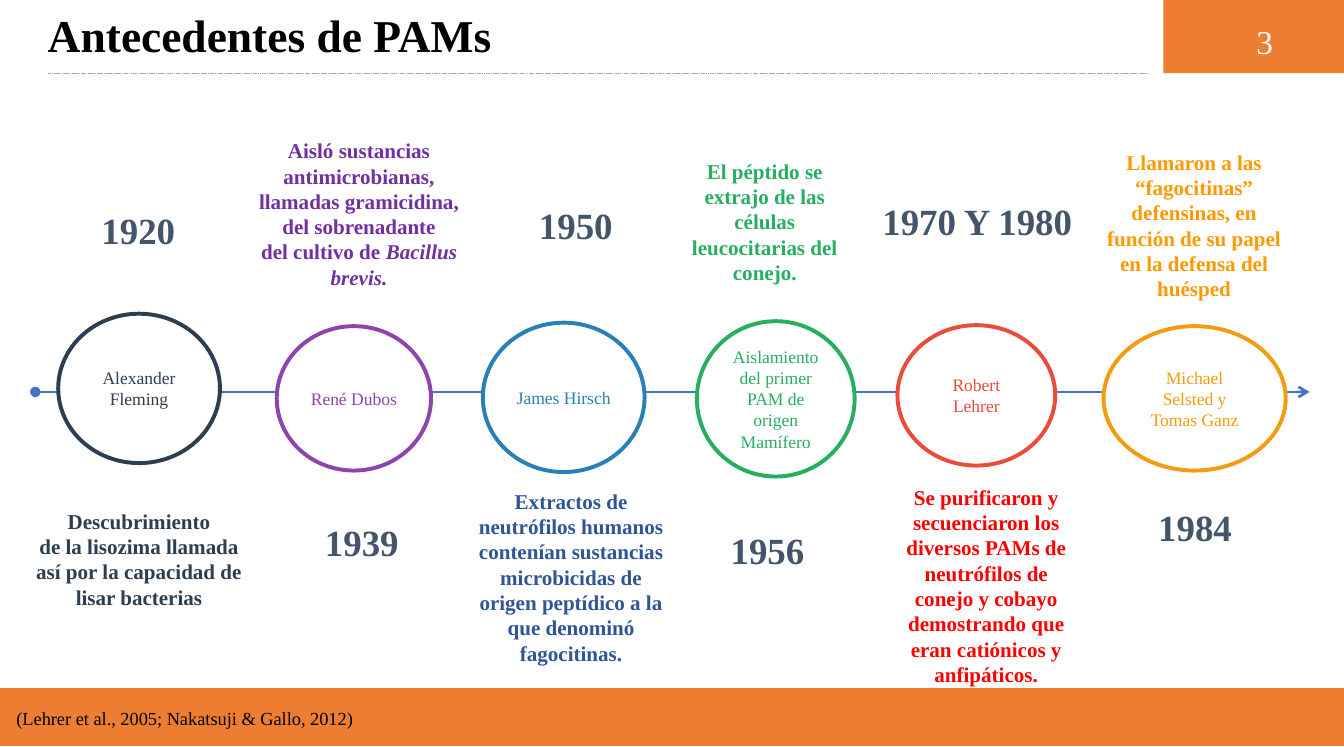
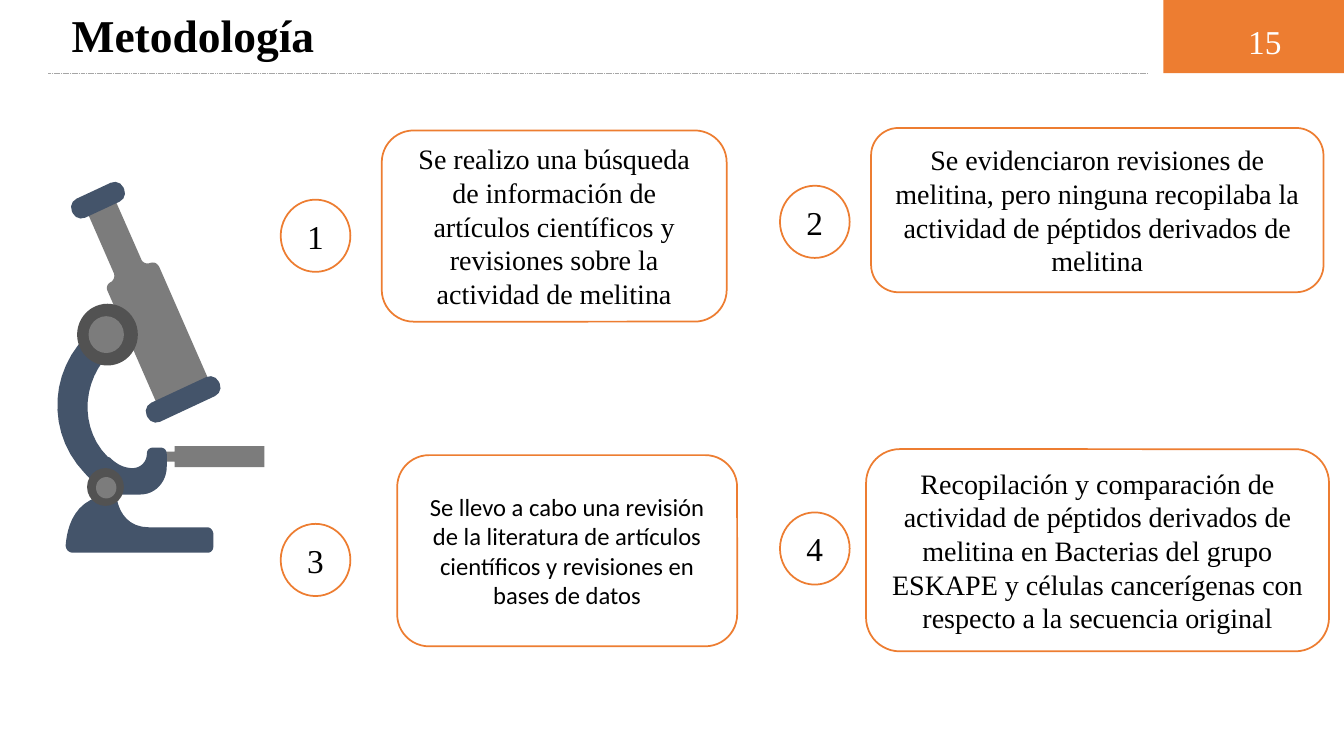
from typing import NamedTuple, Optional

from lxml.etree import SubElement
from pptx import Presentation
from pptx.dml.color import RGBColor
from pptx.enum.dml import MSO_LINE
from pptx.enum.shapes import MSO_CONNECTOR, MSO_SHAPE
from pptx.enum.text import MSO_ANCHOR, PP_ALIGN
from pptx.oxml.ns import qn
from pptx.util import Cm, Pt

# Palette and fonts
ORANGE = RGBColor(0xED, 0x7D, 0x31)
BLACK = RGBColor(0, 0, 0)
WHITE = RGBColor(0xFF, 0xFF, 0xFF)
RULE_GRAY = RGBColor(0xA6, 0xA6, 0xA6)
AXIS_BLUE = RGBColor(0x44, 0x72, 0xC4)
SLATE = RGBColor(0x44, 0x54, 0x6A)
METAL = RGBColor(0x7C, 0x7C, 0x7C)
DARK_METAL = RGBColor(0x52, 0x52, 0x52)
NAVY = RGBColor(0x2D, 0x3E, 0x50)
PURPLE = RGBColor(0x8D, 0x44, 0xAD)
VIOLET = RGBColor(0x70, 0x30, 0xA0)
SKY = RGBColor(0x29, 0x7F, 0xB8)
BLUE = RGBColor(0x2F, 0x55, 0x97)
GREEN = RGBColor(0x27, 0xAE, 0x61)
CORAL = RGBColor(0xE8, 0x4C, 0x3D)
RED = RGBColor(0xFF, 0, 0)
AMBER = RGBColor(0xF3, 0x9C, 0x11)
GOLD = RGBColor(0xFF, 0x99, 0)
SERIF = "Times New Roman"
SANS = "Calibri"

SLIDE_WIDTH, SLIDE_HEIGHT = 27.0, 15.0
HEADER_HEIGHT = 1.47


class Box(NamedTuple):
    """Left, top, width and height in centimetres."""
    left: float
    top: float
    width: float
    height: float

    def emu(self) -> list:
        return [Cm(value) for value in self]


class Milestone(NamedTuple):
    who: tuple
    node: Box
    color: RGBColor
    year: str
    year_box: Box
    fact: tuple
    fact_box: Box
    fact_color: RGBColor


class Step(NamedTuple):
    text: str
    badge: Box
    card: Box
    size: float = 16
    font: str = SERIF


class Outline(NamedTuple):
    """Pairs are straight points; six numbers are a Bézier curve."""
    color: RGBColor
    points: list


MILESTONES = [
    Milestone(("Alexander", "Fleming"), Box(1.17, 6.3, 3.25, 3), NAVY,
              "1920", Box(1.78, 4.04, 2, 1.14),
              ("Descubrimiento", "de la lisozima llamada así por la capacidad de lisar bacterias"),
              Box(0.38, 10.08, 4.83, 2.31), NAVY),
    Milestone(("René Dubos",), Box(5.56, 6.55, 3.1, 2.9), PURPLE,
              "1939", Box(6.27, 10.31, 2, 1.14),
              ("Aisló sustancias antimicrobianas, llamadas gramicidina, del sobrenadante",
               "del cultivo de *Bacillus brevis.*"),
              Box(4.8, 2.64, 4.83, 3.33), VIOLET),
    Milestone(("James Hirsch",), Box(9.7, 6.48, 3.25, 3), SKY,
              "1950", Box(10.57, 3.94, 2, 1.14),
              ("Extractos de neutrófilos humanos contenían sustancias microbicidas de",
               "origen peptídico a la que denominó fagocitinas."),
              Box(9.14, 9.68, 4.67, 3.84), BLUE),
    Milestone(("Aislamiento del primer PAM de origen Mamífero",), Box(14, 6.45, 3.17, 3.12), GREEN,
              "1956", Box(14.42, 10.46, 2, 1.14),
              ("El péptido se extrajo de las células leucocitarias del conejo.",),
              Box(13.36, 3.05, 4.01, 2.82), GREEN),
    Milestone(("Robert Lehrer",), Box(18.03, 6.53, 3.17, 2.82), CORAL,
              "1970 Y 1980", Box(17.17, 3.86, 4.93, 1.14),
              ("Se purificaron y secuenciaron los diversos PAMs de neutrófilos de conejo y cobayo",
               "demostrando que eran catiónicos y anfipáticos."),
              Box(17.81, 9.6, 4.01, 4.37), RED),
    Milestone(("Michael Selsted y", "Tomas Ganz"), Box(22.17, 6.55, 3.66, 2.9), AMBER,
              "1984", Box(23.01, 10.01, 2, 1.14),
              ("Llamaron a las “fagocitinas” defensinas, en función de su papel en la defensa del",
               "huésped"),
              Box(21.92, 2.87, 4.14, 3.33), GOLD),
]

STEPS = [
    Step("Se realizo una búsqueda de información de artículos científicos y revisiones "
         "sobre la actividad de melitina",
         Box(5.64, 4.01, 1.4, 1.45), Box(7.67, 2.62, 6.93, 3.84)),
    Step("Se evidenciaron revisiones de melitina, pero ninguna recopilaba la actividad "
         "de péptidos derivados de melitina",
         Box(15.67, 3.73, 1.4, 1.45), Box(17.5, 2.57, 9.09, 3.3)),
    Step("Se llevo a cabo una revisión de la literatura de artículos científicos y "
         "revisiones en bases de datos",
         Box(5.64, 10.52, 1.4, 1.45), Box(7.98, 9.14, 6.83, 3.84), 14, SANS),
    Step("Recopilación y comparación de actividad de péptidos derivados de melitina en "
         "Bacterias del grupo ESKAPE y células cancerígenas con respecto a la secuencia original",
         Box(15.67, 10.29, 1.4, 1.45), Box(17.4, 9.02, 9.3, 4.06)),
]

# Microscope parts
TUBE = Outline(METAL, [
    (2.29, 5.49), (1.7, 4.14), (2.26, 3.89), (2.84, 5.21),
    (2.87, 5.28, 2.95, 5.31, 3.02, 5.28), (3.1, 5.26, 3.15, 5.28, 3.2, 5.36),
    (4.29, 7.85), (3.25, 8.33), (2.16, 5.84),
    (2.13, 5.77, 2.16, 5.69, 2.24, 5.66), (2.29, 5.61, 2.31, 5.56, 2.29, 5.49)])
STAGE = Outline(METAL, [
    (3.07, 9.07), (3.51, 9.07), (3.51, 8.96), (5.31, 8.96),
    (5.31, 9.38), (3.51, 9.38), (3.51, 9.27), (3.07, 9.27)])
BASE = Outline(SLATE, [
    (4.17, 11.1), (1.47, 11.1), (1.37, 11.1, 1.32, 11.02, 1.32, 10.95),
    (1.35, 10.62, 1.47, 9.93, 2.34, 9.93), (2.34, 9.93, 2.36, 10.59, 3, 10.59),
    (4.17, 10.59), (4.24, 10.59, 4.29, 10.67, 4.29, 10.74),
    (4.29, 10.95), (4.29, 11.05, 4.24, 11.1, 4.17, 11.1)])
ARM = Outline(SLATE, [
    (3.35, 9.12), (3.35, 9.37), (3.35, 9.68, 3.12, 9.93, 2.82, 9.93),
    (2.11, 9.93), (1.7, 9.5), (1.02, 8.79, 0.97, 7.7, 1.57, 6.93),
    (1.85, 6.6), (1.98, 6.45, 2.24, 6.48, 2.34, 6.65),
    (2.36, 6.78, 2.36, 6.91, 2.29, 6.99), (2.08, 7.24),
    (1.63, 7.82, 1.65, 8.66, 2.16, 9.17), (2.21, 9.19),
    (2.34, 9.32, 2.49, 9.4, 2.67, 9.4), (2.82, 9.4, 2.95, 9.27, 2.95, 9.12),
    (2.95, 9.04, 3, 8.99, 3.07, 8.99), (3.23, 8.99),
    (3.3, 8.99, 3.35, 9.04, 3.35, 9.12)])
CAPS = [Box(2.88, 7.81, 1.6, 0.42), Box(1.4, 3.81, 1.14, 0.42)]
CAP_ANGLE = -25
KNOBS = [
    (Box(1.55, 6.1, 1.22, 1.24), DARK_METAL), (Box(1.78, 6.35, 0.71, 0.74), METAL),
    (Box(1.75, 9.4, 0.74, 0.76), DARK_METAL), (Box(1.93, 9.58, 0.41, 0.43), METAL),
]


# Drawing helpers
def paint(shape, fill: Optional[RGBColor], line: Optional[RGBColor], width: float = 1):
    shape.shadow.inherit = False
    if fill is None:
        shape.fill.background()
    else:
        shape.fill.solid()
        shape.fill.fore_color.rgb = fill
    if line is None:
        shape.line.fill.background()
    else:
        shape.line.color.rgb = line
        shape.line.width = Pt(width)
    return shape


def add_figure(slide, kind, box: Box, fill: Optional[RGBColor] = None,
               line: Optional[RGBColor] = None, width: float = 1):
    return paint(slide.shapes.add_shape(kind, *box.emu()), fill, line, width)


def write(shape, *lines: str, size: float, color: RGBColor = BLACK, font: str = SERIF,
          bold: bool = False, align=PP_ALIGN.CENTER, anchor=MSO_ANCHOR.MIDDLE,
          spacing: float = 1.0) -> None:
    """Write one paragraph per line; text between asterisks is italic."""
    frame = shape.text_frame
    frame.word_wrap = True
    frame.vertical_anchor = anchor
    for index, line in enumerate(lines):
        paragraph = frame.paragraphs[0] if index == 0 else frame.add_paragraph()
        paragraph.alignment = align
        paragraph.line_spacing = spacing
        for part, text in enumerate(line.split("*")):
            if not text:
                continue
            run = paragraph.add_run()
            run.text = text
            run.font.name = font
            run.font.size = Pt(size)
            run.font.bold = bold
            run.font.italic = part % 2 == 1
            run.font.color.rgb = color


def add_text(slide, box: Box, *lines: str, **style) -> None:
    write(slide.shapes.add_textbox(*box.emu()), *lines, **style)


def add_rule(slide, start: float, end: float, y: float, color: RGBColor, width: float):
    rule = slide.shapes.add_connector(MSO_CONNECTOR.STRAIGHT, Cm(start), Cm(y), Cm(end), Cm(y))
    rule.line.color.rgb = color
    rule.line.width = Pt(width)
    SubElement(rule._element.spPr, qn("a:effectLst"))
    return rule


def add_outline(slide, outline: Outline, samples: int = 12) -> None:
    x, y = outline.points[0]
    builder = slide.shapes.build_freeform(Cm(x), Cm(y))
    vertices = []
    for point in outline.points[1:]:
        if len(point) == 2:
            vertices.append(point)
        else:
            x1, y1, x2, y2, x3, y3 = point
            for step in range(1, samples + 1):
                t = step / samples
                u = 1 - t
                a, b, c, d = u ** 3, 3 * u * u * t, 3 * u * t * t, t ** 3
                vertices.append((a * x + b * x1 + c * x2 + d * x3,
                                 a * y + b * y1 + c * y2 + d * y3))
        x, y = point[-2:]
    builder.add_line_segments([(Cm(px), Cm(py)) for px, py in vertices], close=True)
    paint(builder.convert_to_shape(), outline.color, None)


# Slides
def add_page(deck, title: str, number: int, title_left: float):
    slide = deck.slides.add_slide(deck.slide_layouts[6])
    rule = add_rule(slide, 0.97, 23.06, HEADER_HEIGHT, RULE_GRAY, 0.25)
    rule.line.dash_style = MSO_LINE.SQUARE_DOT
    add_figure(slide, MSO_SHAPE.RECTANGLE, Box(23.37, 0, 3.63, HEADER_HEIGHT), ORANGE)
    add_text(slide, Box(title_left, 0.23, 21.56, 1.14), title, size=25.9, bold=True,
             align=PP_ALIGN.LEFT, spacing=0.8)
    add_text(slide, Box(24.71, 0.3, 1.4, 1.07), str(number), size=19, color=WHITE,
             anchor=MSO_ANCHOR.TOP)
    return slide


def add_background_slide(deck) -> None:
    slide = add_page(deck, "Antecedentes de PAMs", 3, 0.71)
    axis = add_rule(slide, 0.71, 26.31, 7.87, AXIS_BLUE, 1.5)
    axis_line = axis._element.spPr.find(qn("a:ln"))
    SubElement(axis_line, qn("a:headEnd"), type="oval")
    SubElement(axis_line, qn("a:tailEnd"), type="arrow")
    for item in MILESTONES:
        node = add_figure(slide, MSO_SHAPE.OVAL, item.node, WHITE, item.color, 2.25)
        frame = node.text_frame
        frame.margin_left = frame.margin_right = Cm(0.18)
        frame.margin_top = frame.margin_bottom = Cm(0.1)
        write(node, *item.who, size=10, color=item.color)
        add_text(slide, item.year_box, item.year, size=21, color=SLATE, bold=True)
        add_text(slide, item.fact_box, *item.fact, size=12, color=item.fact_color, bold=True,
                 anchor=MSO_ANCHOR.TOP)
    # Citation band
    add_figure(slide, MSO_SHAPE.RECTANGLE, Box(0, 13.84, SLIDE_WIDTH, 1.12), ORANGE, ORANGE)
    add_text(slide, Box(0.08, 14.05, 15.62, 0.71), "(Lehrer et al., 2005; Nakatsuji & Gallo, 2012)",
             size=10.5, align=PP_ALIGN.LEFT, anchor=MSO_ANCHOR.TOP, spacing=1.07)


def add_microscope(slide) -> None:
    add_outline(slide, TUBE)
    for box in CAPS:
        cap = add_figure(slide, MSO_SHAPE.ROUNDED_RECTANGLE, box, SLATE)
        cap.adjustments[0] = 0.45
        cap.rotation = CAP_ANGLE
    for outline in (STAGE, BASE, ARM):
        add_outline(slide, outline)
    for box, color in KNOBS:
        add_figure(slide, MSO_SHAPE.OVAL, box, color)


def add_method_slide(deck) -> None:
    slide = add_page(deck, "Metodología", 15, 1.19)
    add_microscope(slide)
    for number, step in enumerate(STEPS, start=1):
        card = add_figure(slide, MSO_SHAPE.ROUNDED_RECTANGLE, step.card, line=ORANGE)
        write(card, step.text, size=step.size, font=step.font)
        badge = add_figure(slide, MSO_SHAPE.OVAL, step.badge, line=ORANGE)
        write(badge, str(number), size=19)


def main() -> None:
    deck = Presentation()
    deck.slide_width, deck.slide_height = Cm(SLIDE_WIDTH), Cm(SLIDE_HEIGHT)
    add_background_slide(deck)
    add_method_slide(deck)
    deck.save("out.pptx")


if __name__ == "__main__":
    main()
